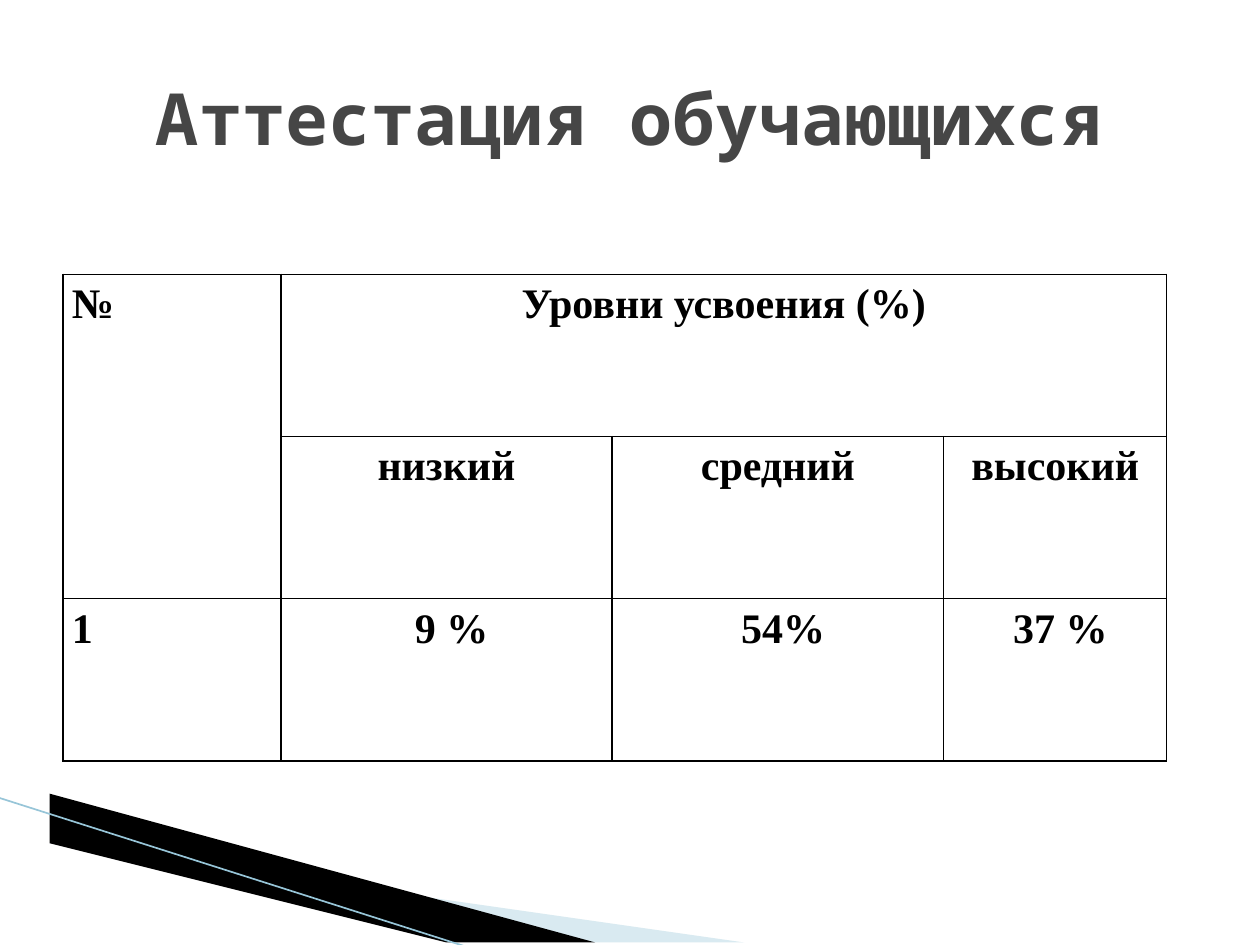
"""Build the slide with the table of learners' assessment levels."""
from dataclasses import dataclass

from lxml import etree
from pptx import Presentation
from pptx.dml.color import RGBColor
from pptx.enum.shapes import MSO_CONNECTOR
from pptx.enum.text import MSO_ANCHOR, PP_ALIGN
from pptx.oxml import parse_xml
from pptx.oxml.ns import qn
from pptx.util import Cm, Pt

CENTER, JUSTIFY = PP_ALIGN.CENTER, PP_ALIGN.JUSTIFY
MIDDLE = MSO_ANCHOR.MIDDLE
STRAIGHT = MSO_CONNECTOR.STRAIGHT
DRAWING_NS = "http://schemas.openxmlformats.org/drawingml/2006/main"


@dataclass(frozen=True)
class Theme:
    title_font: str = "Noto Sans Mono"
    table_font: str = "Times New Roman"
    title_size: float = 41
    table_size: float = 24
    title_color: str = "464646"
    ink: str = "000000"
    pale_wedge: str = "A0CBDC"
    edge: str = "97C5D8"
    edge_width: float = 0.95
    border_width: float = 1


@dataclass(frozen=True)
class Wedge:
    points: tuple
    color: str
    opacity: int = 100


@dataclass(frozen=True)
class Entry:
    row: int
    column: int
    text: str
    rows: int = 1
    columns: int = 1


THEME = Theme()
WEDGES = (
    Wedge(((1.4, 16.53), (15.11, 19.08), (11.58, 19.08), (1.4, 16.51)), THEME.pale_wedge, 40),
    Wedge(((1.35, 16.48), (11.61, 19.08), (9.45, 19.1), (1.37, 16.51)), THEME.ink),
)
COLUMN_WIDTHS = (4.39, 6.68, 6.68, 4.5)
ROW_HEIGHT = 3.27
ROW_COUNT = 3
ENTRIES = (
    Entry(0, 0, "№", rows=2),
    Entry(0, 1, "Уровни усвоения (%)", columns=3),
    Entry(1, 1, "низкий"),
    Entry(1, 2, "средний"),
    Entry(1, 3, "высокий"),
    Entry(2, 0, "1"),
    Entry(2, 1, " 9 %"),
    Entry(2, 2, " 54%"),
    Entry(2, 3, " 37 %"),
)


def write_text(frame, text: str, *, font: str, size: float, color: str,
               align=CENTER, spacing: float = 1.0) -> None:
    paragraph = frame.paragraphs[0]
    paragraph.alignment = align
    paragraph.line_spacing = spacing
    run = paragraph.add_run()
    run.text = text
    run.font.name = font
    run.font.size = Pt(size)
    run.font.bold = True
    run.font.color.rgb = RGBColor.from_string(color)


def draw_wedge(slide, wedge: Wedge) -> None:
    start, *others = wedge.points
    builder = slide.shapes.build_freeform(*start, scale=Cm(1))
    builder.add_line_segments(others, close=True)
    shape = builder.convert_to_shape()
    shape.shadow.inherit = False
    shape.line.fill.background()
    shape.fill.solid()
    shape.fill.fore_color.rgb = RGBColor.from_string(wedge.color)
    if wedge.opacity < 100:
        color = shape.fill._xPr.find(qn("a:solidFill"))[0]
        etree.SubElement(color, qn("a:alpha"), val=str(wedge.opacity * 1000))


def draw_edge(slide) -> None:
    edge = slide.shapes.add_connector(STRAIGHT, Cm(-0.03), Cm(16.08), Cm(9.45), Cm(19.1))
    edge.line.color.rgb = RGBColor.from_string(THEME.edge)
    edge.line.width = Pt(THEME.edge_width)
    etree.SubElement(edge._element.spPr, qn("a:effectLst"))


def draw_title(slide) -> None:
    title = slide.shapes.add_textbox(Cm(1.27), Cm(0.76), Cm(22.86), Cm(3.18))
    title.text_frame.word_wrap = True
    title.text_frame.vertical_anchor = MIDDLE
    write_text(title.text_frame, "Аттестация обучающихся", font=THEME.title_font,
               size=THEME.title_size, color=THEME.title_color)


def style_cell(cell) -> None:
    cell.margin_left = cell.margin_right = Cm(0.18)
    cell.margin_top = cell.margin_bottom = 0
    properties = cell._tc.get_or_add_tcPr()
    for side in ("lnL", "lnR", "lnT", "lnB"):
        properties.append(parse_xml(
            f'<a:{side} xmlns:a="{DRAWING_NS}" w="{Pt(THEME.border_width)}">'
            f'<a:solidFill><a:srgbClr val="{THEME.ink}"/></a:solidFill></a:{side}>'))
    cell.fill.background()


def draw_levels(slide) -> None:
    table = slide.shapes.add_table(
        ROW_COUNT, len(COLUMN_WIDTHS), Cm(1.27), Cm(5.53),
        Cm(sum(COLUMN_WIDTHS)), Cm(ROW_HEIGHT * ROW_COUNT)).table
    table.first_row = table.horz_banding = False
    for column, width in zip(table.columns, COLUMN_WIDTHS):
        column.width = Cm(width)
    for row in table.rows:
        row.height = Cm(ROW_HEIGHT)
    for cell in table.iter_cells():
        style_cell(cell)
    for entry in ENTRIES:
        cell = table.cell(entry.row, entry.column)
        if entry.rows > 1 or entry.columns > 1:
            cell.merge(table.cell(entry.row + entry.rows - 1,
                                  entry.column + entry.columns - 1))
        write_text(cell.text_frame, entry.text, font=THEME.table_font,
                   size=THEME.table_size, color=THEME.ink,
                   align=CENTER if entry.column else JUSTIFY, spacing=1.15)


def main() -> None:
    deck = Presentation()
    deck.slide_width, deck.slide_height = Cm(25.4), Cm(19.05)
    slide = deck.slides.add_slide(deck.slide_layouts[6])
    for wedge in WEDGES:
        draw_wedge(slide, wedge)
    draw_edge(slide)
    draw_title(slide)
    draw_levels(slide)
    deck.save("out.pptx")


if __name__ == "__main__":
    main()
